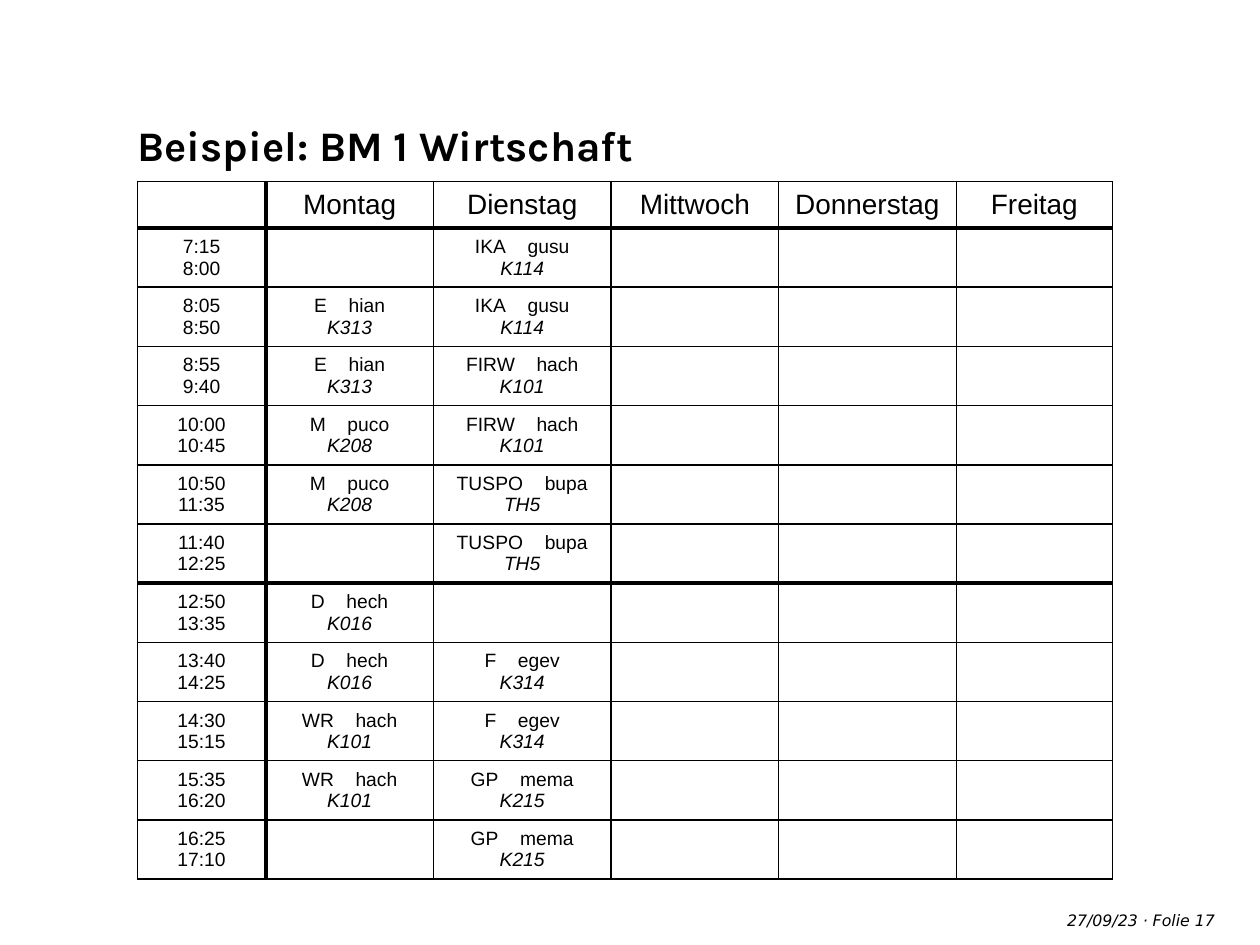
from lxml.etree import SubElement
from pptx import Presentation
from pptx.dml.color import RGBColor
from pptx.enum.text import MSO_ANCHOR, MSO_AUTO_SIZE, PP_ALIGN
from pptx.oxml.ns import qn
from pptx.util import Inches, Pt

BLACK = "000000"
DAYS = ["Montag", "Dienstag", "Mittwoch", "Donnerstag", "Freitag"]
LESSONS = [
    ("7:15", "8:00", None, ("IKA", "gusu", "K114")),
    ("8:05", "8:50", ("E", "hian", "K313"), ("IKA", "gusu", "K114")),
    ("8:55", "9:40", ("E", "hian", "K313"), ("FIRW", "hach", "K101")),
    ("10:00", "10:45", ("M", "puco", "K208"), ("FIRW", "hach", "K101")),
    ("10:50", "11:35", ("M", "puco", "K208"), ("TUSPO", "bupa", "TH5")),
    ("11:40", "12:25", None, ("TUSPO", "bupa", "TH5")),
    ("12:50", "13:35", ("D", "hech", "K016"), None),
    ("13:40", "14:25", ("D", "hech", "K016"), ("F", "egev", "K314")),
    ("14:30", "15:15", ("WR", "hach", "K101"), ("F", "egev", "K314")),
    ("15:35", "16:20", ("WR", "hach", "K101"), ("GP", "mema", "K215")),
    ("16:25", "17:10", None, ("GP", "mema", "K215")),
]
COL_WIDTHS = [1.02, 1.33, 1.41, 1.33, 1.41, 1.24]
HEADER_HEIGHT, LESSON_HEIGHT = 0.37, 0.47
THICK_ROW_LINES = {1, 7}
THICK_COL_LINES = {1}


def set_color(color_format, value):
    color_format.rgb = RGBColor.from_string(value)


def add_run(p, text, size, font="Arial", bold=False, italic=False):
    r = p.add_run()
    r.text = text
    r.font.size = Pt(size)
    r.font.name = font
    r.font.bold = bold
    r.font.italic = italic
    set_color(r.font.color, BLACK)
    return r


def set_margins(tf, left, top, right, bottom):
    tf.margin_left, tf.margin_top = Inches(left), Inches(top)
    tf.margin_right, tf.margin_bottom = Inches(right), Inches(bottom)


def add_title(s, x, y, w, h):
    sp = s.shapes.title
    sp.left, sp.top, sp.width, sp.height = map(Inches, (x, y, w, h))
    tf = sp.text_frame
    tf.word_wrap = False
    tf.auto_size = MSO_AUTO_SIZE.NONE
    tf.vertical_anchor = MSO_ANCHOR.TOP
    set_margins(tf, 0, 0.05, 0.1, 0.05)
    p = tf.paragraphs[0]
    p.alignment = PP_ALIGN.LEFT
    add_run(p, "Beispiel: BM 1 Wirtschaft", 24, "Karla", bold=True)


def add_footer(s, x, y, w, h, text, alignment):
    sp = s.shapes.add_textbox(*map(Inches, (x, y, w, h)))
    tf = sp.text_frame
    tf.word_wrap = True
    set_margins(tf, 0, 0, 0, 0)
    p = tf.paragraphs[0]
    p.alignment = alignment
    add_run(p, text, 9, "DejaVu Sans", italic=True)


def set_borders(cell, row, col):
    tcPr = cell._tc.get_or_add_tcPr()
    sides = [
        ("a:lnL", col in THICK_COL_LINES),
        ("a:lnR", col + 1 in THICK_COL_LINES),
        ("a:lnT", row in THICK_ROW_LINES),
        ("a:lnB", row + 1 in THICK_ROW_LINES),
    ]
    for tag, thick in sides:
        ln = SubElement(tcPr, qn(tag), w=str(Pt(2.25 if thick else 1)))
        fill = SubElement(ln, qn("a:solidFill"))
        SubElement(fill, qn("a:srgbClr"), val=BLACK)


def add_lesson(p, subject, teacher):
    add_run(p, subject, 11)
    gap = add_run(p, " ", 11)
    gap._r.get_or_add_rPr().set("spc", "920")
    add_run(p, teacher, 11)


def fill_cell(cell, row, col):
    tf = cell.text_frame
    p = tf.paragraphs[0]
    p.alignment = PP_ALIGN.CENTER
    if row == 0:
        entry = DAYS[col - 1] if col else None
    elif col == 0:
        entry = LESSONS[row - 1][:2]
    else:
        entry = LESSONS[row - 1][col + 1] if col < 3 else None

    if entry is None:
        p._p.get_or_add_endParaRPr().set("sz", "1100")
        return
    if row == 0:
        add_run(p, entry, 16)
        return
    if col == 0:
        add_run(p, entry[0], 11)
    else:
        add_lesson(p, *entry[:2])
    p = tf.add_paragraph()
    p.alignment = PP_ALIGN.CENTER
    add_run(p, entry[-1], 11, italic=col > 0)


def add_timetable(s, x, y, w, h):
    rows = len(LESSONS) + 1
    frame = s.shapes.add_table(rows, len(COL_WIDTHS), *map(Inches, (x, y, w, h)))
    table = frame.table
    table.first_row = False
    table.horz_banding = False
    for column, width in zip(table.columns, COL_WIDTHS):
        column.width = Inches(width)
    for row, table_row in enumerate(table.rows):
        table_row.height = Inches(LESSON_HEIGHT if row else HEADER_HEIGHT)
        for col, cell in enumerate(table_row.cells):
            cell.vertical_anchor = MSO_ANCHOR.MIDDLE
            set_margins(cell, 0.1, 0.05, 0.1, 0.05)
            set_borders(cell, row, col)
            cell.fill.background()
            fill_cell(cell, row, col)


def main():
    prs = Presentation()
    prs.slide_width, prs.slide_height = Inches(10), Inches(7.5)
    s = prs.slides.add_slide(prs.slide_layouts[5])
    add_footer(s, 7.49, 7.23, 1.54, 0.2, "27/09/23", PP_ALIGN.RIGHT)
    add_footer(s, 9.07, 7.23, 0.76, 0.2, "· Folie 17", PP_ALIGN.LEFT)
    add_title(s, 1.09, 0.9, 4.46, 0.51)
    add_timetable(s, 1.09, 1.44, 7.74, 5.5)
    prs.save("out.pptx")


if __name__ == "__main__":
    main()
